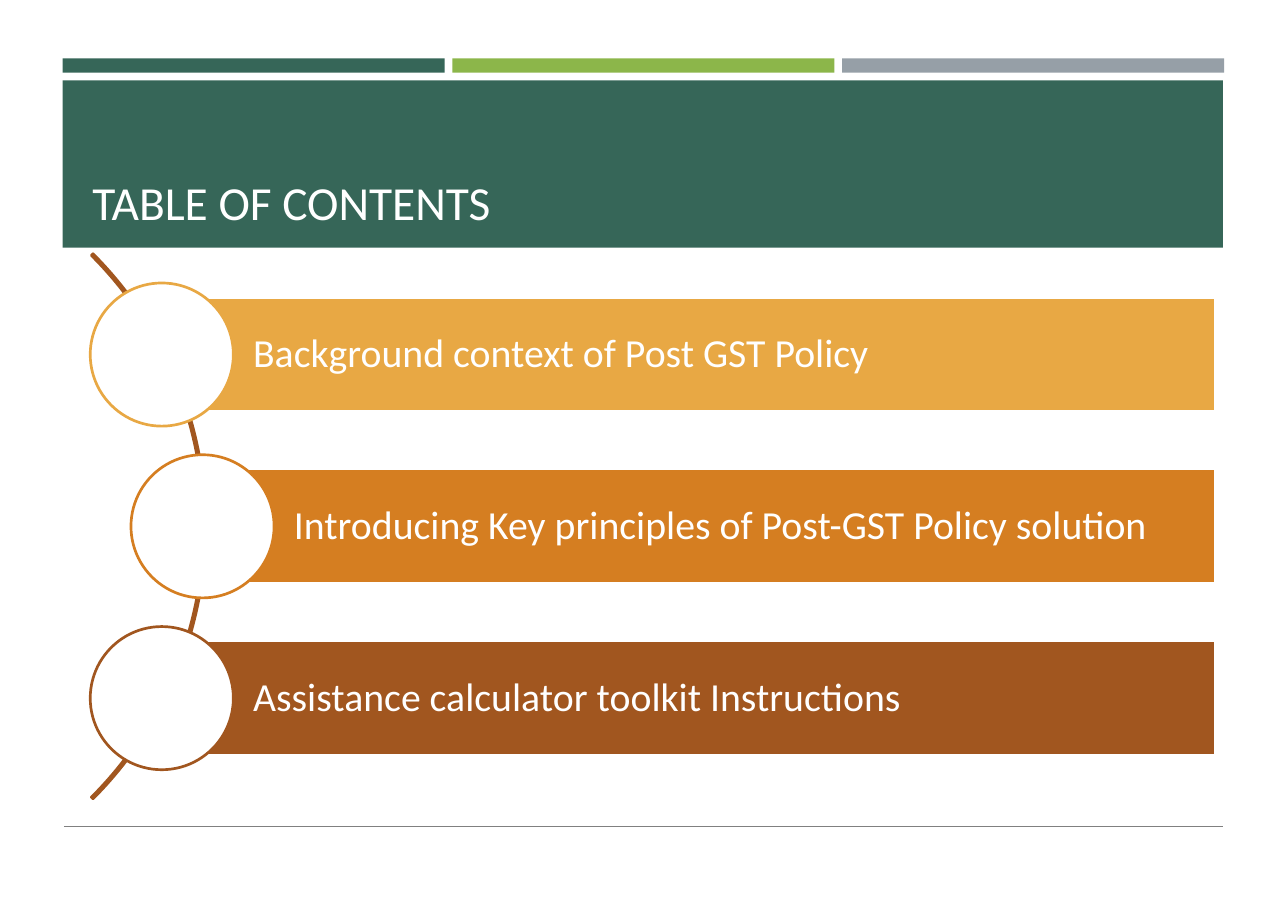
from lxml import etree
from pptx import Presentation
from pptx.dml.color import RGBColor
from pptx.enum.shapes import MSO_CONNECTOR, MSO_SHAPE
from pptx.enum.text import MSO_ANCHOR, PP_ALIGN
from pptx.oxml.ns import qn
from pptx.util import Pt

RECTANGLE, OVAL, BLOCK_ARC = MSO_SHAPE.RECTANGLE, MSO_SHAPE.OVAL, MSO_SHAPE.BLOCK_ARC
STRAIGHT = MSO_CONNECTOR.STRAIGHT
MIDDLE, BOTTOM = MSO_ANCHOR.MIDDLE, MSO_ANCHOR.BOTTOM
LEFT = PP_ALIGN.LEFT

EMU_PER_PX = 9144
FONT = "Calibri"
COLOURS = {
    "white": "FFFFFF",
    "green": "366658",
    "lime": "8CB64A",
    "slate": "969FA7",
    "rule": "808080",
    "amber": "E8A844",
    "orange": "D57E21",
    "brown": "A1561F",
}
STRIPES = ["green", "lime", "slate"]
TOPICS = [
    ("Background context of Post GST Policy", "amber", 82),
    ("Introducing Key principles of Post-GST Policy solution", "orange", 119),
    ("Assistance calculator toolkit Instructions", "brown", 82),
]
STRIPE_PITCH = 354
TOPIC_PITCH = 156
CIRCLE_SIZE = 130
BAR_RIGHT = 1104


def px(*lengths):
    """Turn pixel lengths into EMU."""
    return [length * EMU_PER_PX for length in lengths]


def colour(name):
    """Return the named palette colour."""
    return RGBColor.from_string(COLOURS[name])


def add_block(page, kind, bounds, fill=None, line=None):
    """Add a preset shape with optional fill and outline."""
    block = page.shapes.add_shape(kind, *px(*bounds))
    block.shadow.inherit = False
    if fill:
        block.fill.solid()
        block.fill.fore_color.rgb = colour(fill)
    else:
        block.fill.background()
    if line:
        block.line.color.rgb = colour(line)
        block.line.width = Pt(1.75)
    else:
        block.line.fill.background()
    return block


def write_text(box, text, size, anchor, insets):
    """Put one white left-aligned line of text into a box."""
    frame = box.text_frame
    frame.word_wrap = True
    frame.vertical_anchor = anchor
    frame.margin_left, frame.margin_top, frame.margin_right, frame.margin_bottom = px(*insets)
    frame.text = text
    para = frame.paragraphs[0]
    para.alignment = LEFT
    span = para.runs[0]
    span.font.name = FONT
    span.font.size = Pt(size)
    span.font.color.rgb = colour("white")


def add_header(page):
    """Add the three stripes and the title panel."""
    for index, fill in enumerate(STRIPES):
        add_block(page, RECTANGLE, (57 + index * STRIPE_PITCH, 53, 347, 13), fill)
    add_block(page, RECTANGLE, (57, 73, 1054, 152), "green")
    title = page.shapes.add_textbox(*px(74, 83, 1022, 131))
    write_text(title, "TABLE OF CONTENTS", 31, BOTTOM, (10, 5, 10, 5))


def add_footer_rule(page):
    """Add the thin rule at the foot of the page."""
    rule = page.shapes.add_connector(STRAIGHT, *px(58, 750, 1111, 750))
    rule.line.color.rgb = colour("rule")
    rule.line.width = Pt(0.25)
    etree.SubElement(rule._element.spPr, qn("a:effectLst"))


def add_arc(page):
    """Add the thin arc that links the topics."""
    arc = add_block(page, BLOCK_ARC, (-513, 128, 700, 700), line="brown")
    for index, value in enumerate((189, 27, 0.003)):
        arc.adjustments[index] = value


def add_topic(page, index, text, tint, circle_left):
    """Add one topic bar with its circle."""
    circle_top = 257 + index * TOPIC_PITCH
    bar_left = circle_left + CIRCLE_SIZE // 2
    bar_bounds = (bar_left, circle_top + 13, BAR_RIGHT - bar_left, 104)
    bar = add_block(page, RECTANGLE, bar_bounds, tint, "white")
    write_text(bar, text, 26, MIDDLE, (83, 7, 7, 7))
    bar.text_frame.paragraphs[0].line_spacing = 0.9
    circle_bounds = (circle_left, circle_top, CIRCLE_SIZE, CIRCLE_SIZE)
    add_block(page, OVAL, circle_bounds, "white", tint)


def main():
    """Build and save the contents slide."""
    deck = Presentation()
    deck.slide_width, deck.slide_height = px(1170, 830)
    page = deck.slides.add_slide(deck.slide_layouts[6])
    add_header(page)
    add_footer_rule(page)
    add_arc(page)
    for index, topic in enumerate(TOPICS):
        add_topic(page, index, *topic)
    deck.save("out.pptx")


if __name__ == "__main__":
    main()
